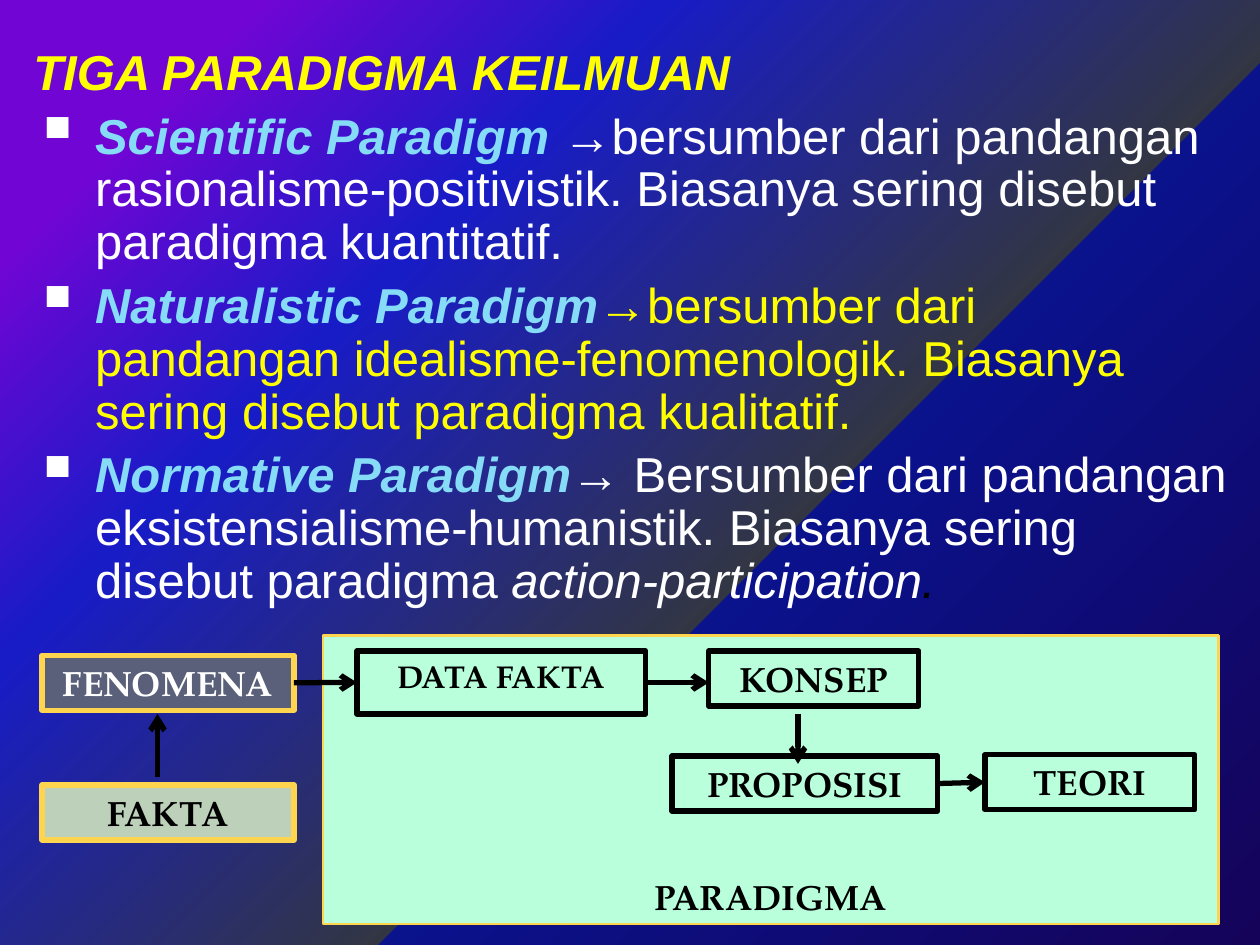
from lxml import etree
from pptx import Presentation
from pptx.dml.color import RGBColor
from pptx.enum.shapes import MSO_CONNECTOR, MSO_SHAPE
from pptx.enum.text import MSO_ANCHOR, MSO_AUTO_SIZE, PP_ALIGN
from pptx.oxml import parse_xml
from pptx.oxml.ns import nsdecls, qn
from pptx.util import Inches, Pt

RECTANGLE = MSO_SHAPE.RECTANGLE
STRAIGHT = MSO_CONNECTOR.STRAIGHT
TOP, BOTTOM = MSO_ANCHOR.TOP, MSO_ANCHOR.BOTTOM
GROW = MSO_AUTO_SIZE.SHAPE_TO_FIT_TEXT
CENTER = PP_ALIGN.CENTER
LEFT_SIDE, RIGHT_SIDE = 1, 3

WHITE, BLACK, YELLOW, SKY, GOLD = "FFFFFF", "000000", "FFFF00", "86DBF6", "FFD54F"
BACKGROUND_STOPS = [(0, "150359"), (40, "0A128C"), (40, "323643"), (70, "181CC7"), (88, "7005D4")]


def color(value):
    return RGBColor.from_string(value)


def cells(count):
    return Inches(count / 24)


class ParadigmSlide:
    """Draws slide elements on a grid of 240 columns and 180 rows."""

    body_font, body_size = "Arial", 28
    box_font, box_size = "TeX Gyre Pagella", 20
    line_width = 3

    def __init__(self, presentation):
        presentation.slide_width, presentation.slide_height = cells(240), cells(180)
        self.slide = presentation.slides.add_slide(presentation.slide_layouts[6])

    def background(self, stops):
        marks = "".join(
            f'<a:gs pos="{share * 1000}"><a:srgbClr val="{value}"/></a:gs>' for share, value in stops
        )
        self.slide.element.cSld.insert(0, parse_xml(
            f'<p:bg {nsdecls("p", "a")}><p:bgPr><a:gradFill rotWithShape="1"><a:gsLst>{marks}</a:gsLst>'
            '<a:path path="circle"><a:fillToRect l="100000" t="100000"/></a:path>'
            '</a:gradFill><a:effectLst/></p:bgPr></p:bg>'
        ))

    def body(self, left, top, width, height, paragraphs):
        shape = self.slide.shapes.add_textbox(*map(cells, (left, top, width, height)))
        frame = shape.text_frame
        frame.word_wrap = True
        for index, runs in enumerate(paragraphs):
            paragraph = frame.paragraphs[0] if index == 0 else frame.add_paragraph()
            paragraph.line_spacing = 0.9
            paragraph.space_before = Pt(6 if index else 18)
            if index:
                self.bullet(paragraph)
            paragraph.font.name = self.body_font
            paragraph.font.size = Pt(self.body_size)
            for text, value, bold, italic in runs:
                run = paragraph.add_run()
                run.text = text
                run.font.color.rgb = color(value)
                run.font.bold, run.font.italic = bold, italic

    def bullet(self, paragraph):
        properties = paragraph._p.get_or_add_pPr()
        properties.set("marL", str(Inches(0.49)))
        properties.set("indent", str(-Inches(0.49)))
        bullet_color = etree.SubElement(properties, qn("a:buClr"))
        etree.SubElement(bullet_color, qn("a:srgbClr"), val=WHITE)
        etree.SubElement(properties, qn("a:buSzPct"), val="133000")
        etree.SubElement(properties, qn("a:buChar"), char="▪")

    def box(self, text, left, top, width, height=10.5, fill=None, line=BLACK,
            line_width=line_width, text_color=BLACK, size=box_size, anchor=TOP):
        shape = self.slide.shapes.add_shape(RECTANGLE, *map(cells, (left, top, width, height)))
        shape.shadow.inherit = False
        if fill:
            shape.fill.solid()
            shape.fill.fore_color.rgb = color(fill)
        else:
            shape.fill.background()
        shape.line.color.rgb = color(line)
        shape.line.width = Pt(line_width)
        frame = shape.text_frame
        frame.word_wrap, frame.vertical_anchor = True, anchor
        if anchor == TOP:
            frame.auto_size = GROW
        paragraph = frame.paragraphs[0]
        paragraph.text, paragraph.alignment = text, CENTER
        font = paragraph.font
        font.name, font.size, font.bold = self.box_font, Pt(size), True
        font.color.rgb = color(text_color)
        return shape

    def arrow(self, start, end, source=None, target=None):
        connector = self.slide.shapes.add_connector(STRAIGHT, *map(cells, (*start, *end)))
        if source:
            connector.begin_connect(source, RIGHT_SIDE)
        if target:
            connector.end_connect(target, LEFT_SIDE)
        connector.line.color.rgb = color(BLACK)
        connector.line.width = Pt(self.line_width)
        etree.SubElement(connector.line._get_or_add_ln(), qn("a:tailEnd"), type="arrow")
        etree.SubElement(connector._element.spPr, qn("a:effectLst"))


def main():
    presentation = Presentation()
    page = ParadigmSlide(presentation)
    page.background(BACKGROUND_STOPS)
    page.body(4, 8, 232, 162, [
        [("TIGA PARADIGMA KEILMUAN", YELLOW, True, True)],
        [("Scientific Paradigm ", SKY, True, True),
         ("→bersumber dari pandangan rasionalisme-positivistik. "
          "Biasanya sering disebut paradigma kuantitatif.", WHITE, False, False)],
        [("Naturalistic Paradigm", SKY, True, True),
         ("→bersumber dari pandangan idealisme-fenomenologik. "
          "Biasanya sering disebut paradigma kualitatif.", YELLOW, False, False)],
        [("Normative Paradigm", SKY, True, True),
         ("→ ", WHITE, True, False),
         ("Bersumber dari pandangan eksistensialisme-humanistik. "
          "Biasanya sering disebut paradigma ", WHITE, False, False),
         ("action-participation", WHITE, False, True),
         (".", BLACK, False, True)],
    ])

    page.box("PARADIGMA", 61.5, 121, 170.6, 55, fill="B9FFDC", line=GOLD, line_width=1.5, anchor=BOTTOM)
    phenomenon = page.box("FENOMENA", 8, 124.8, 48, fill="5A6079", line=GOLD, text_color=WHITE)
    page.box("FAKTA", 8, 149.5, 48, fill="BCD0BA", line=GOLD)
    data = page.box("DATA FAKTA", 68, 124, 55, 12, size=18)
    page.box("KONSEP", 135, 124, 40)
    proposition = page.box("PROPOSISI", 128, 144, 50.6)
    theory = page.box("TEORI", 187.6, 143.75, 40)

    page.arrow((30, 148), (30, 136))
    page.arrow((56, 130), (68, 130), phenomenon, data)
    page.arrow((123, 130), (135, 130), data)
    page.arrow((152, 136), (152, 145.5))
    page.arrow((178.6, 149.25), (187.6, 149), proposition, theory)
    presentation.save("out.pptx")


if __name__ == "__main__":
    main()
